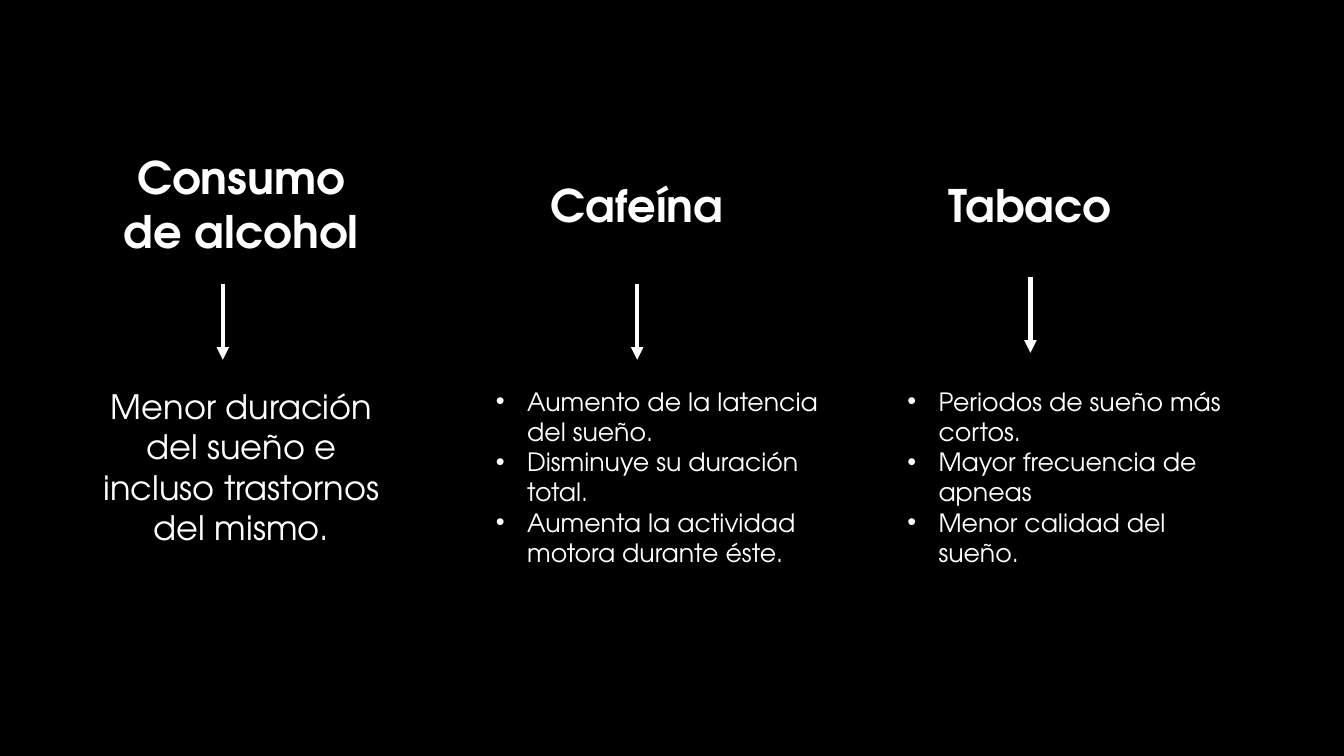
from lxml.etree import SubElement
from pptx import Presentation
from pptx.dml.color import RGBColor
from pptx.enum.shapes import MSO_CONNECTOR
from pptx.enum.text import MSO_AUTO_SIZE, PP_ALIGN
from pptx.oxml.ns import qn
from pptx.util import Inches, Pt

BLACK = RGBColor(0x00, 0x00, 0x00)
WHITE = RGBColor(0xFF, 0xFF, 0xFF)
FONT = "TeX Gyre Adventor"
EFFECTS_TOP = 3.78
ARROW_LENGTH = 0.75

# Each substance: heading and its box, arrow start, effects and their box
substances = [
    ("Consumo de alcohol", (0.96, 1.44, 2.87, 1.18), (2.21, 2.82),
     ["Menor duración del sueño e incluso trastornos del mismo."],
     (0.82, EFFECTS_TOP, 3.15, 1.72)),
    ("Cafeína", (5.13, 1.71, 2.38, 0.64), (6.32, 2.82),
     ["Aumento de la latencia del sueño.",
      "Disminuye su duración total.",
      "Aumenta la actividad motora durante éste."],
     (4.82, EFFECTS_TOP, 3.49, 1.92)),
    ("Tabaco", (9.14, 1.71, 2.15, 0.64), (10.22, 2.75),
     ["Periodos de sueño más cortos.",
      "Mayor frecuencia de apneas",
      "Menor calidad del sueño."],
     (8.9, EFFECTS_TOP, 3.59, 1.92)),
]


def add_text(box, lines, size, bold=False, bulleted=False):
    frame = slide.shapes.add_textbox(*map(Inches, box)).text_frame
    frame.word_wrap = True
    frame.auto_size = MSO_AUTO_SIZE.SHAPE_TO_FIT_TEXT
    for index, line in enumerate(lines):
        paragraph = frame.add_paragraph() if index else frame.paragraphs[0]
        if bulleted:
            properties = paragraph._p.get_or_add_pPr()
            properties.set("marL", str(Inches(0.31)))
            properties.set("indent", str(Inches(-0.31)))
            SubElement(properties, qn("a:buFont"), typeface="Arial")
            SubElement(properties, qn("a:buChar"), char="•")
        else:
            paragraph.alignment = PP_ALIGN.CENTER
        run = paragraph.add_run()
        run.text = line
        run.font.name = FONT
        run.font.size = Pt(size)
        run.font.bold = bold
        run.font.color.rgb = WHITE


# Slide with black background
presentation = Presentation()
presentation.slide_width = Inches(13.33)
presentation.slide_height = Inches(7.5)
slide = presentation.slides.add_slide(presentation.slide_layouts[6])
slide.background.fill.solid()
slide.background.fill.fore_color.rgb = BLACK

for heading, heading_box, (arrow_x, arrow_y), effects, effects_box in substances:
    # Heading
    add_text(heading_box, [heading], 32, bold=True)

    # Effects: a list when there are several
    several = len(effects) > 1
    add_text(effects_box, effects, 18 if several else 24, bulleted=several)

    # Arrow from heading to effects
    arrow = slide.shapes.add_connector(
        MSO_CONNECTOR.STRAIGHT, Inches(arrow_x), Inches(arrow_y),
        Inches(arrow_x), Inches(arrow_y + ARROW_LENGTH))
    arrow.line.color.rgb = WHITE
    arrow.line.width = Pt(3)
    SubElement(arrow.line._get_or_add_ln(), qn("a:tailEnd"), type="triangle")
    SubElement(arrow._element.spPr, qn("a:effectLst"))

presentation.save("out.pptx")
